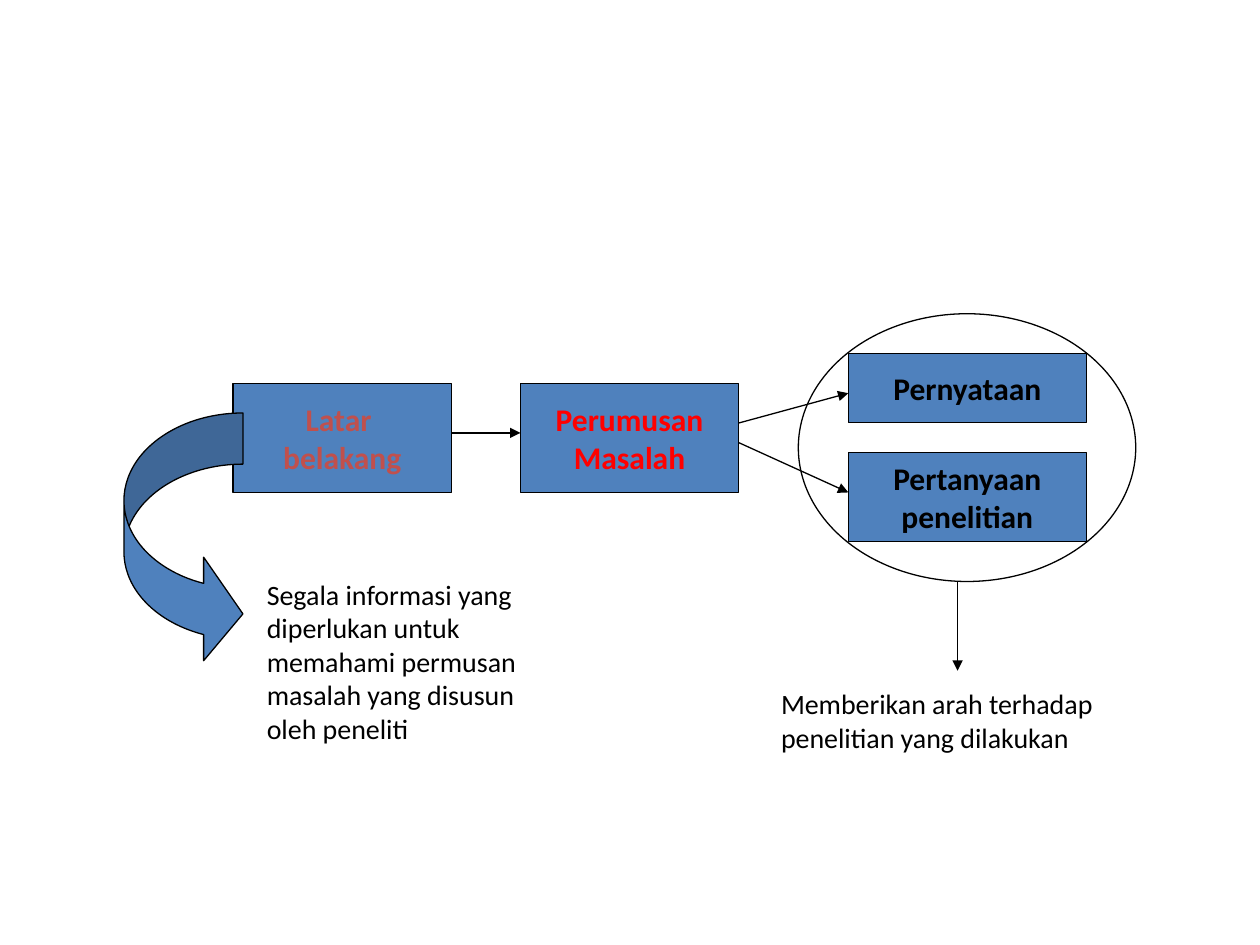
from lxml import etree
from pptx import Presentation
from pptx.dml.color import RGBColor
from pptx.enum.shapes import MSO_CONNECTOR, MSO_SHAPE
from pptx.enum.text import MSO_ANCHOR, PP_ALIGN
from pptx.oxml.ns import qn
from pptx.util import Pt

RECTANGLE, ELLIPSE = MSO_SHAPE.RECTANGLE, MSO_SHAPE.OVAL
CURVED_ARROW = MSO_SHAPE.CURVED_RIGHT_ARROW
STRAIGHT = MSO_CONNECTOR.STRAIGHT
LEFT, CENTER = PP_ALIGN.LEFT, PP_ALIGN.CENTER
MIDDLE = MSO_ANCHOR.MIDDLE

BLACK = RGBColor(0x00, 0x00, 0x00)
BLUE = RGBColor(0x4F, 0x81, 0xBD)
BRICK = RGBColor(0xC0, 0x50, 0x4D)
RED = RGBColor(0xFF, 0x00, 0x00)
OUTLINE = Pt(0.75)


def draw_outlined(preset, left, top, width, height, fill=None):
    outlined = slide.shapes.add_shape(preset, Pt(left), Pt(top), Pt(width), Pt(height))
    outlined.shadow.inherit = False
    if fill is None:
        outlined.fill.background()
    else:
        outlined.fill.solid()
        outlined.fill.fore_color.rgb = fill
    outlined.line.color.rgb = BLACK
    outlined.line.width = OUTLINE
    return outlined


def write_text(frame, wording, alignment, color, **font_format):
    frame.text = wording
    for paragraph in frame.paragraphs:
        paragraph.alignment = alignment
        font = paragraph.runs[0].font
        font.color.rgb = color
        for attribute, value in {"name": "Calibri", **font_format}.items():
            setattr(font, attribute, value)


presentation = Presentation()
presentation.slide_width, presentation.slide_height = Pt(720), Pt(540)
slide = presentation.slides.add_slide(presentation.slide_layouts[6])

# Concept boxes
concepts = [
    ("Perumusan\nMasalah", RED, 297.4, 219, 124.7, 62.4),
    ("Latar \nbelakang", BRICK, 133.2, 219, 124.7, 62.4),
    ("Pernyataan", BLACK, 484.8, 202, 136, 39.6),
    ("Pertanyaan\npenelitian", BLACK, 484.8, 258.5, 136, 51),
]
for wording, color, *bounds in concepts:
    concept = draw_outlined(RECTANGLE, *bounds, fill=BLUE)
    concept.text_frame.word_wrap = False
    concept.text_frame.vertical_anchor = MIDDLE
    write_text(concept.text_frame, wording, CENTER, color, size=Pt(18), bold=True)

# Curved arrow from the background box to its explanation
explanation_arrow = draw_outlined(CURVED_ARROW, 70.8, 236, 68, 144.4, fill=BLUE)
for index, ratio in enumerate((0.43, 0.87, 0.33)):
    explanation_arrow.adjustments[index] = ratio

# Ellipse around statement and question
draw_outlined(ELLIPSE, 456.2, 179.3, 192.8, 153)

# Straight arrows: start x, start y, end x, end y
flows = [
    (422.3, 241.7, 484.8, 224.7),
    (422.3, 253, 484.8, 281.4),
    (257.9, 247.4, 297.4, 247.4),
    (547.2, 332.3, 547.2, 383.3),
]
for ends in flows:
    flow = slide.shapes.add_connector(STRAIGHT, *map(Pt, ends))
    flow.line.color.rgb = BLACK
    flow.line.width = OUTLINE
    etree.SubElement(flow.line._get_or_add_ln(), qn("a:tailEnd"), type="triangle")
    etree.SubElement(flow._element.spPr, qn("a:effectLst"))

# Explanations
explanations = [
    ("Segala informasi yang diperlukan untuk memahami permusan masalah "
     "yang disusun oleh peneliti", 145.4, 326.2, 169.2, 151.9),
    ("Memberikan arah terhadap penelitian yang dilakukan", 439.2, 388.8, 215.3, 46),
]
for wording, *bounds in explanations:
    explanation = slide.shapes.add_textbox(*map(Pt, bounds))
    explanation.text_frame.word_wrap = True
    write_text(explanation.text_frame, wording, LEFT, BLACK, size=Pt(16))

presentation.save("out.pptx")
